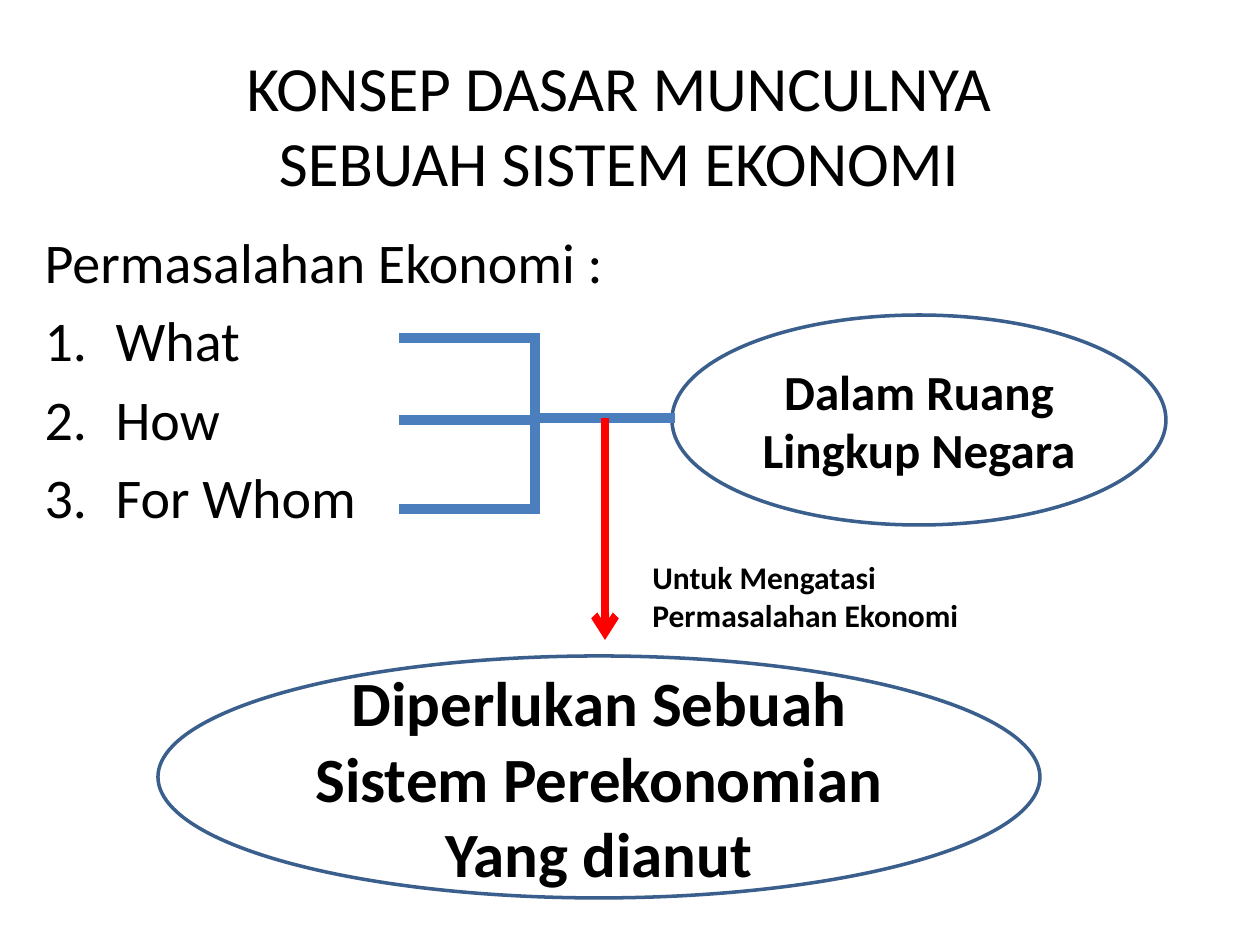
from lxml.etree import SubElement
from pptx import Presentation
from pptx.dml.color import RGBColor
from pptx.enum.shapes import MSO_CONNECTOR, MSO_SHAPE
from pptx.enum.text import MSO_ANCHOR, MSO_AUTO_SIZE, PP_ALIGN
from pptx.oxml.ns import qn
from pptx.util import Emu, Pt

COLORS = {"text": "000000", "outline": "3A5F8C", "bracket": "4B7EBC", "arrow": "FF0000"}
FONT = "Calibri"

TITLE = ("KONSEP DASAR MUNCULNYA SEBUAH SISTEM EKONOMI", (136, 42, 966, 165))
PROBLEM_HEADING = "Permasalahan Ekonomi :"
PROBLEMS = ["What", "How", "For Whom"]
PROBLEMS_BOX = (32, 221, 620, 368)
OVALS = [
    ("Dalam Ruang Lingkup Negara", 28, (672, 315, 494, 210)),
    ("Diperlukan Sebuah Sistem Perekonomian Yang dianut", 36, (158, 656, 882, 242)),
]
PURPOSE = ["Untuk Mengatasi", "Permasalahan Ekonomi"]
PURPOSE_BOX = (640, 552, 334, 89)

BRANCH_LEFT, SPINE_X, LINK_RIGHT = 399, 535, 675
BRANCH_YS = [338, 420, 509]
LINK_Y = 418
SPINE_OVERHANG = 5
ARROW_X, ARROW_BOTTOM = 605, 640
INDENT = 71


def px(length):
    return Emu(round(length * 914400 / 126))


def place(part, box):
    part.left, part.top, part.width, part.height = map(px, box)


def write(paragraph, text, size, bold=False, align=PP_ALIGN.LEFT):
    paragraph.alignment = align
    run = paragraph.add_run()
    run.text = text
    run.font.name = FONT
    run.font.size = Pt(size)
    run.font.bold = bold
    run.font.color.rgb = RGBColor.from_string(COLORS["text"])


def number(paragraph, numbered):
    properties = paragraph._p.get_or_add_pPr()
    indent = px(INDENT) if numbered else 0
    properties.set("marL", str(indent))
    properties.set("indent", str(-indent))
    if numbered:
        SubElement(properties, qn("a:buFont"), typeface="+mj-lt")
        SubElement(properties, qn("a:buAutoNum"), type="arabicPeriod")
    else:
        SubElement(properties, qn("a:buNone"))


def draw_line(shapes, start, end, color, width, arrowhead=False):
    connector = shapes.add_connector(MSO_CONNECTOR.STRAIGHT, *map(px, start + end))
    connector.line.color.rgb = RGBColor.from_string(COLORS[color])
    connector.line.width = Pt(width)
    if arrowhead:
        SubElement(connector.line._get_or_add_ln(), qn("a:tailEnd"), type="arrow")
    SubElement(connector._element.spPr, qn("a:effectLst"))


def main():
    prs = Presentation()
    prs.slide_width, prs.slide_height = px(1260), px(945)
    slide = prs.slides.add_slide(prs.slide_layouts[1])
    shapes = slide.shapes

    title_text, title_box = TITLE
    place(shapes.title, title_box)
    title_frame = shapes.title.text_frame
    title_frame.auto_size = MSO_AUTO_SIZE.NONE
    title_frame.vertical_anchor = MSO_ANCHOR.TOP
    write(title_frame.paragraphs[0], title_text, 36, align=PP_ALIGN.CENTER)

    problems = slide.placeholders[1]
    place(problems, PROBLEMS_BOX)
    problems_frame = problems.text_frame
    problems_frame.auto_size = MSO_AUTO_SIZE.NONE
    for i, line in enumerate([PROBLEM_HEADING] + PROBLEMS):
        paragraph = problems_frame.add_paragraph() if i else problems_frame.paragraphs[0]
        write(paragraph, line, 32)
        number(paragraph, numbered=i > 0)

    for text, size, box in OVALS:
        oval = shapes.add_shape(MSO_SHAPE.OVAL, *map(px, box))
        oval.shadow.inherit = False
        oval.fill.background()
        oval.line.color.rgb = RGBColor.from_string(COLORS["outline"])
        oval.line.width = Pt(2)
        oval.text_frame.word_wrap = True
        oval.text_frame.vertical_anchor = MSO_ANCHOR.MIDDLE
        write(oval.text_frame.paragraphs[0], text, size, True, PP_ALIGN.CENTER)

    draw_line(shapes, (SPINE_X + 4, LINK_Y), (LINK_RIGHT, LINK_Y), "bracket", 6)
    bracket = shapes.add_group_shape().shapes
    for y in BRANCH_YS:
        draw_line(bracket, (BRANCH_LEFT, y), (SPINE_X, y), "bracket", 6)
    draw_line(bracket, (SPINE_X, BRANCH_YS[0] - SPINE_OVERHANG),
              (SPINE_X, BRANCH_YS[-1] + SPINE_OVERHANG), "bracket", 6)
    draw_line(shapes, (ARROW_X, LINK_Y), (ARROW_X, ARROW_BOTTOM), "arrow", 4.5, True)

    purpose_frame = shapes.add_textbox(*map(px, PURPOSE_BOX)).text_frame
    purpose_frame.word_wrap = False
    for i, line in enumerate(PURPOSE):
        paragraph = purpose_frame.add_paragraph() if i else purpose_frame.paragraphs[0]
        write(paragraph, line, 18, True)

    prs.save("out.pptx")


if __name__ == "__main__":
    main()
